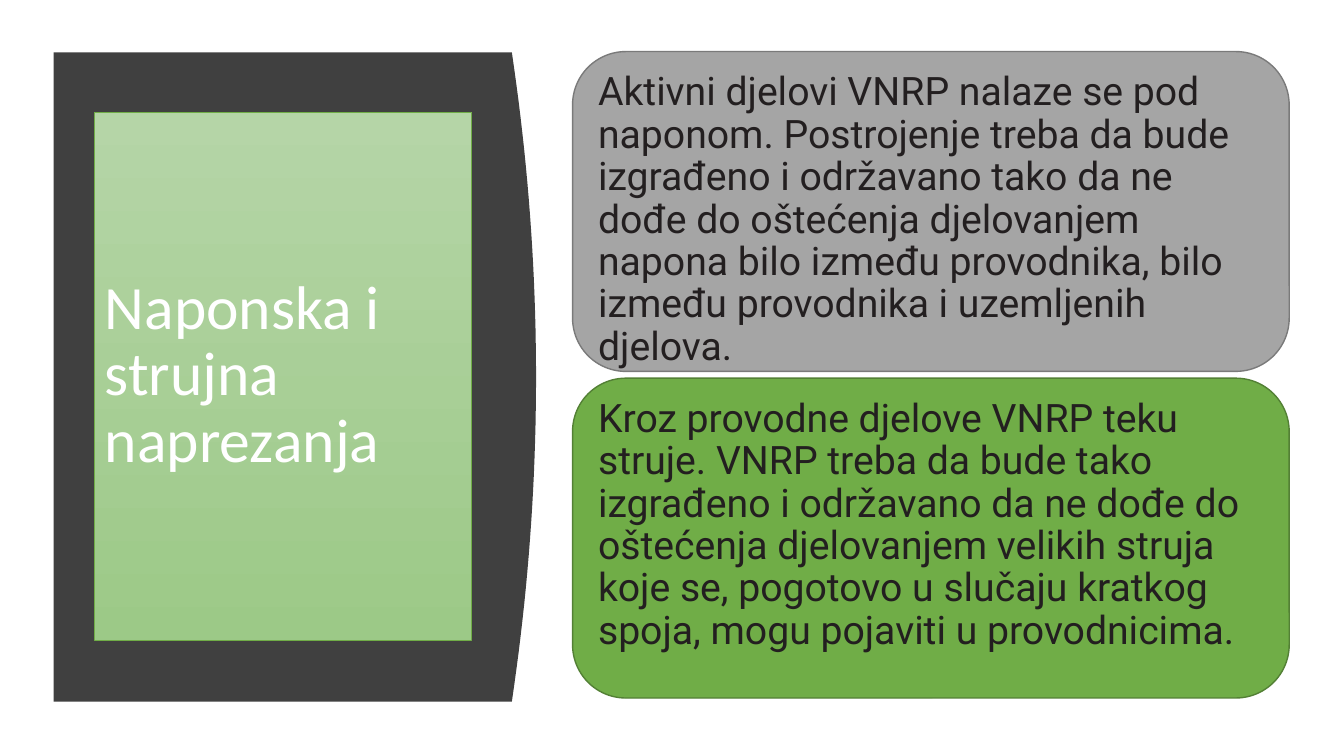
from pptx import Presentation
from pptx import util as u
from pptx.dml.color import RGBColor
from pptx.enum import shapes, text

COLORS = {
    "panel": "404040", "white": "FFFFFF", "ink": "231F20",
    "gray": "A5A5A5", "gray_edge": "7A7A7A",
    "green": "70AD47", "green_edge": "538035",
    "light_top": "B5D5A7", "light_bottom": "9CC987",
}


def color(name):
    return RGBColor.from_string(COLORS[name])


def style_text(frame, anchor, font, size, ink):
    frame.word_wrap = True
    frame.auto_size = text.MSO_AUTO_SIZE.NONE
    frame.vertical_anchor = anchor
    para = frame.paragraphs[0]
    para.alignment = text.PP_ALIGN.LEFT
    para.line_spacing = 0.9
    span = para.runs[0].font
    span.name, span.size = font, u.Pt(size)
    span.color.rgb = color(ink)


deck = Presentation()
deck.slide_width, deck.slide_height = u.Cm(33.87), u.Cm(19.05)
page = deck.slides.add_slide(deck.slide_layouts[5])

# Dark panel whose right side bulges outwards as a parabola
left, top, right, bottom, bulge = 1.35, 1.32, 12.9, 17.68, 0.61
steps = 40
curve = []
for step in range(steps + 1):
    t = 2 * step / steps - 1
    curve.append((u.Cm(right + bulge * (1 - t * t)),
                  u.Cm(top + (bottom - top) * step / steps)))
outline = page.shapes.build_freeform(u.Cm(left), u.Cm(top))
outline.add_line_segments(curve + [(u.Cm(left), u.Cm(bottom))], close=True)
panel = outline.convert_to_shape()
panel.shadow.inherit = False
panel.fill.solid()
panel.fill.fore_color.rgb = color("panel")
panel.line.fill.background()

# Two stacked cards
cards = [
    ("gray", "Aktivni djelovi VNRP nalaze se pod naponom. Postrojenje treba da bude "
             "izgrađeno i održavano tako da ne dođe do oštećenja djelovanjem napona bilo "
             "između provodnika, bilo između provodnika i uzemljenih djelova."),
    ("green", "Kroz provodne djelove VNRP teku struje. VNRP treba da bude tako izgrađeno "
              "i održavano da ne dođe do oštećenja djelovanjem velikih struja koje se, "
              "pogotovo u slučaju kratkog spoja, mogu pojaviti u provodnicima."),
]
for row, (tone, words) in enumerate(cards):
    card = page.shapes.add_shape(
        shapes.MSO_SHAPE.ROUNDED_RECTANGLE,
        u.Cm(14.43), u.Cm(1.3 + 8.23 * row), u.Cm(18.06), u.Cm(8.06))
    card.shadow.inherit = False
    card.fill.solid()
    card.fill.fore_color.rgb = color(tone)
    card.line.color.rgb = color(tone + "_edge")
    card.line.width = u.Pt(1)
    card.text_frame.text = words
    card.text_frame.paragraphs[0].space_after = u.Pt(6)
    style_text(card.text_frame, text.MSO_ANCHOR.TOP, "Roboto", 28, "ink")

# Title, brought in front of the panel
title = page.shapes.title
panel.element.addnext(title.element)
title.left, title.top = u.Cm(2.39), u.Cm(2.82)
title.width, title.height = u.Cm(9.5), u.Cm(13.31)
title.fill.gradient()
title.fill.gradient_angle = 270
for stop, name, place in zip(title.fill.gradient_stops, ("light_top", "light_bottom"), (0, 1)):
    stop.color.rgb = color(name)
    stop.position = place
title.line.color.rgb = color("green")
title.line.width = u.Pt(0.5)
title.text_frame.text = "Naponska i strujna naprezanja"
style_text(title.text_frame, text.MSO_ANCHOR.MIDDLE, "Calibri", 44, "white")

deck.save("out.pptx")
